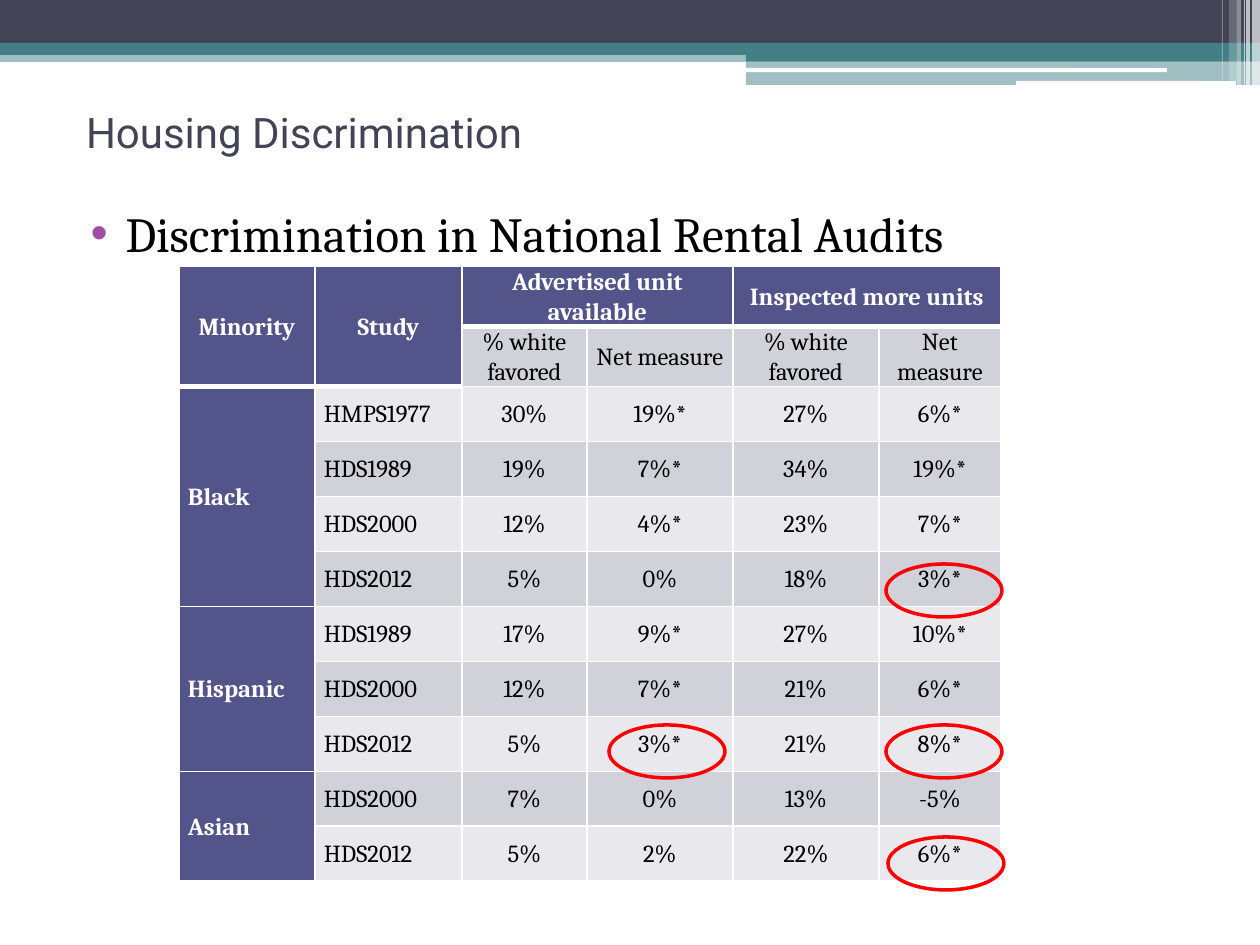
from dataclasses import dataclass

from lxml.etree import SubElement
from pptx import Presentation
from pptx.dml.color import RGBColor
from pptx.enum.shapes import MSO_SHAPE
from pptx.enum.text import MSO_ANCHOR, MSO_AUTO_SIZE, PP_ALIGN
from pptx.oxml.ns import qn
from pptx.util import Emu, Pt


@dataclass(frozen=True)
class Theme:
    """Colours, fonts and type sizes of the slide."""
    white: str = "FFFFFF"
    black: str = "000000"
    slate: str = "424456"
    teal: str = "438086"
    indigo: str = "53548A"
    bands: tuple = ("E9E9ED", "D1D1DA")
    bullet: str = "A04DA3"
    ring: str = "FF0000"
    title_font: str = "Roboto"
    body_font: str = "Cambria"
    title_size: int = 24
    body_size: int = 28
    table_size: int = 14


THEME = Theme()
SCALE = 914400 / 126
COLUMN_WIDTHS = (136, 147, 125, 146, 146, 122)
HEADER_HEIGHT, ROW_HEIGHT = 50, 55
SUBHEADS = ("% white favored", "Net measure") * 2
AUDITS = {
    "Black": (
        ("HMPS1977", "30%", "19%*", "27%", "6%*"),
        ("HDS1989", "19%", "7%*", "34%", "19%*"),
        ("HDS2000", "12%", "4%*", "23%", "7%*"),
        ("HDS2012", "5%", "0%", "18%", "3%*"),
    ),
    "Hispanic": (
        ("HDS1989", "17%", "9%*", "27%", "10%*"),
        ("HDS2000", "12%", "7%*", "21%", "6%*"),
        ("HDS2012", "5%", "3%*", "21%", "8%*"),
    ),
    "Asian": (
        ("HDS2000", "7%", "0%", "13%", "-5%"),
        ("HDS2012", "5%", "2%", "22%", "6%*"),
    ),
}


def px(length):
    """Turn px into EMU."""
    return Emu(round(length * SCALE))


def rgb(colour):
    """Turn a hex string into a colour."""
    return RGBColor.from_string(colour)


def write_text(frame, text, font=THEME.body_font, size=THEME.table_size,
               colour=THEME.black, bold=False, align=PP_ALIGN.LEFT, spacing=1.0):
    """Write one formatted paragraph into a text frame."""
    paragraph = frame.paragraphs[0]
    paragraph.alignment = align
    paragraph.line_spacing = spacing
    paragraph.space_before = Pt(0)
    run = paragraph.add_run()
    run.text = text
    run.font.name = font
    run.font.size = Pt(size)
    run.font.bold = bold
    run.font.color.rgb = rgb(colour)


def place(shape, box):
    """Move a shape to a box given in px."""
    shape.left, shape.top, shape.width, shape.height = map(px, box)


def add_block(shapes, kind, box, fill=None, opacity=100, line=None):
    """Add a preset shape with a plain fill or outline."""
    shape = shapes.add_shape(kind, *map(px, box))
    shape.shadow.inherit = False
    if fill:
        shape.fill.solid()
        shape.fill.fore_color.rgb = rgb(fill)
        if opacity < 100:
            colour = shape.fill._xPr.find(".//" + qn("a:srgbClr"))
            SubElement(colour, qn("a:alpha"), val=str(opacity * 1000))
    else:
        shape.fill.background()
    if line:
        shape.line.color.rgb = rgb(line)
        shape.line.width = Pt(2)
    else:
        shape.line.fill.background()
    return shape


def add_banner(slide, box):
    """Draw the layered bars and the stripes at the right end."""
    left, top, width, height = box
    middle = left + 746
    tail = width - 746
    bars = (
        (left, 50, width, 12, THEME.teal, 50),
        (left, 0, width, 43, THEME.slate, 100),
        (left, 43, width, 12, THEME.teal, 100),
        (middle, 49, tail, 12, THEME.teal, 100),
        (middle, 61, tail, 24, THEME.teal, 50),
    )
    for x, y, bar_width, bar_height, colour, opacity in bars:
        add_block(slide.shapes, MSO_SHAPE.RECTANGLE,
                  (x, top + y, bar_width, bar_height), colour, opacity)
    for x, y, rule_width, rule_height in ((745, 68, 422, 4), (1016, 81, 220, 5)):
        add_block(slide.shapes, MSO_SHAPE.ROUNDED_RECTANGLE,
                  (left + x, top + y, rule_width, rule_height), THEME.white)
    stripes = ((8, 8, 0, 65), (14, 4, 0, 65), (16, 1, 0, 60),
               (23, 4, 0, 40), (31, 8, 4, 20), (38, 1, 4, 30))
    for offset, stripe_width, gap, opacity in stripes:
        add_block(slide.shapes, MSO_SHAPE.RECTANGLE,
                  (left + width - offset, top, stripe_width, height - gap),
                  THEME.white, opacity)


def fill_title(title, box):
    """Place and write the slide title."""
    place(title, box)
    frame = title.text_frame
    frame.margin_left = px(23)
    frame.vertical_anchor = MSO_ANCHOR.MIDDLE
    frame.auto_size = MSO_AUTO_SIZE.NONE
    write_text(frame, "Housing Discrimination", font=THEME.title_font,
               size=THEME.title_size, colour=THEME.slate)


def fill_body(body, box):
    """Place and write the bulleted heading."""
    place(body, box)
    frame = body.text_frame
    frame.auto_size = MSO_AUTO_SIZE.NONE
    properties = frame.paragraphs[0]._p.get_or_add_pPr()
    properties.set("marL", str(px(50)))
    properties.set("indent", str(px(-35)))
    bullet_colour = SubElement(properties, qn("a:buClr"))
    SubElement(bullet_colour, qn("a:srgbClr"), val=THEME.bullet)
    SubElement(properties, qn("a:buFont"), typeface="Arial")
    SubElement(properties, qn("a:buChar"), char="•")
    write_text(frame, "Discrimination in National Rental Audits", size=THEME.body_size)


def format_cell(cell, fill, top=1, bottom=1):
    """Give a cell its borders, fill, margins and anchor."""
    properties = cell._tc.get_or_add_tcPr()
    for side, width in (("L", 1), ("R", 1), ("T", top), ("B", bottom)):
        border = SubElement(properties, qn(f"a:ln{side}"), w=str(Pt(width)))
        solid = SubElement(border, qn("a:solidFill"))
        SubElement(solid, qn("a:srgbClr"), val=THEME.white)
    cell.fill.solid()
    cell.fill.fore_color.rgb = rgb(fill)
    cell.margin_left = cell.margin_right = px(9)
    cell.margin_top = cell.margin_bottom = 0
    cell.vertical_anchor = MSO_ANCHOR.MIDDLE


def write_cell(cell, text, heading=False, align=PP_ALIGN.CENTER):
    """Write a heading or a value into a cell."""
    write_text(cell.text_frame, text, bold=heading, align=align, spacing=1.07,
               colour=THEME.white if heading else THEME.black)


def add_audit_table(slide, box):
    """Build the table of audit results by minority and study."""
    studies = [study for group in AUDITS.values() for study in group]
    table = slide.shapes.add_table(len(studies) + 2, len(COLUMN_WIDTHS), *map(px, box)).table
    table.first_row = table.horz_banding = False
    for column, width in zip(table.columns, COLUMN_WIDTHS):
        column.width = px(width)
    for index, row in enumerate(table.rows):
        row.height = px(ROW_HEIGHT if index else HEADER_HEIGHT)
        for position, cell in enumerate(row.cells):
            heading = index == 0 or position == 0 or (index == 1 and position == 1)
            last_heading = 1 if position < 2 else 0
            format_cell(cell, THEME.indigo if heading else THEME.bands[index % 2],
                        top=3 if index == last_heading + 1 else 1,
                        bottom=3 if index in (0, last_heading) else 1)
    headings = (("Minority", 0, 1, 0), ("Study", 1, 1, 1),
                ("Advertised unit available", 2, 0, 3), ("Inspected more units", 4, 0, 5))
    for text, first, last_row, last_column in headings:
        table.cell(0, first).merge(table.cell(last_row, last_column))
        write_cell(table.cell(0, first), text, heading=True)
    for position, text in enumerate(SUBHEADS, 2):
        write_cell(table.cell(1, position), text)
    start = 2
    for minority, group in AUDITS.items():
        table.cell(start, 0).merge(table.cell(start + len(group) - 1, 0))
        write_cell(table.cell(start, 0), minority, heading=True, align=PP_ALIGN.LEFT)
        start += len(group)
    for index, study in enumerate(studies, 2):
        for position, text in enumerate(study, 1):
            write_cell(table.cell(index, position), text,
                       align=PP_ALIGN.LEFT if position == 1 else PP_ALIGN.CENTER)


def add_rings(slide, box):
    """Circle the notable net measures on the table."""
    group = slide.shapes.add_group_shape()
    for x, y in ((707, 298), (430, 459), (707, 459), (709, 571)):
        add_block(group.shapes, MSO_SHAPE.OVAL,
                  (box[0] + x, box[1] + y, 116, 53), line=THEME.ring)


def main():
    """Build and save the presentation."""
    presentation = Presentation()
    presentation.slide_width, presentation.slide_height = px(1260), px(945)
    slide = presentation.slides.add_slide(presentation.slide_layouts[1])
    add_banner(slide, (0, 0, 1260, 85))
    fill_title(slide.shapes.title, (63, 95, 1134, 73))
    fill_body(slide.placeholders[1], (63, 197, 1134, 738))
    table_box = (179, 266, 822, 617)
    add_audit_table(slide, table_box)
    add_rings(slide, table_box)
    presentation.save("out.pptx")


if __name__ == "__main__":
    main()
